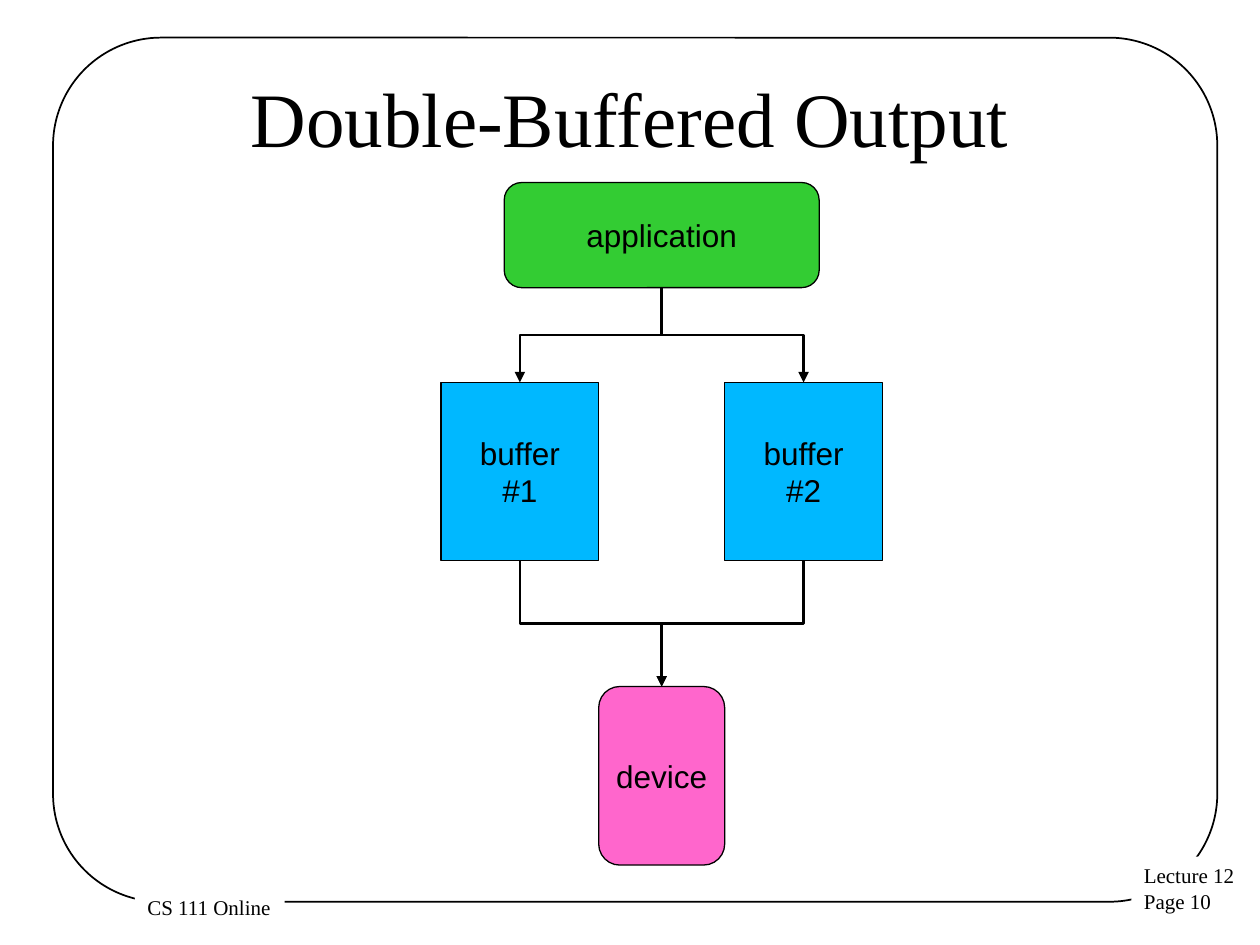
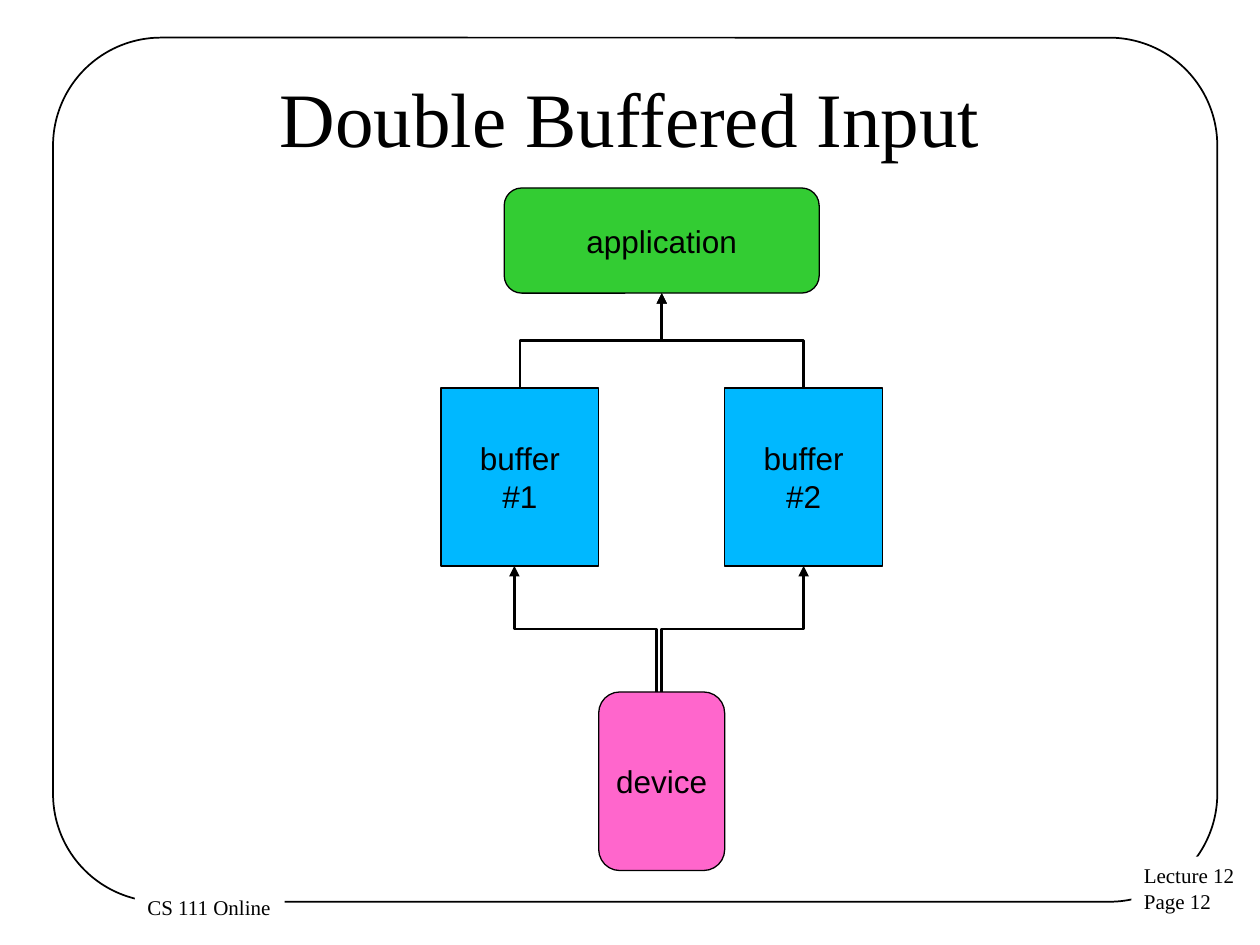
from dataclasses import dataclass

from pptx import Presentation, util as u
from pptx.dml import color
from pptx.enum import shapes, text
from pptx.oxml import ns
from lxml import etree

# Shared style
BLACK, WHITE = "000000", "FFFFFF"
GREEN, BLUE, PINK = "33CC33", "00B8FF", "FF66CC"
SERIF, SANS = "Times New Roman", "Arial"
RECT = shapes.MSO_SHAPE.RECTANGLE
ROUNDED = shapes.MSO_SHAPE.ROUNDED_RECTANGLE
CENTER, LEFT = text.PP_ALIGN.CENTER, text.PP_ALIGN.LEFT
MIDDLE, TOP = text.MSO_ANCHOR.MIDDLE, text.MSO_ANCHOR.TOP

# Diagram layout in centimetres
AXIS = 13.34
BUFFER_OFFSET = 2.86
UPPER_GAP, LOWER_GAP = 1.91, 2.54


@dataclass
class Box:
    left: float
    top: float
    width: float
    height: float
    fill: str | None = None
    line: float | None = None
    corner: float | None = None

    @property
    def center(self) -> float:
        return self.left + self.width / 2

    @property
    def bottom(self) -> float:
        return self.top + self.height


@dataclass
class BufferSlide:
    title: str
    page: int
    top: float
    upward: bool
    left_shift: float = 0


FRAME = Box(1.07, 0.76, 23.47, 17.42, line=1, corner=0.125)
PAGE = Box(22.81, 17.27, 2.36, 1.3, fill=WHITE)
COURSE = Box(2.72, 17.91, 3.02, 0.76, fill=WHITE)
TITLE = Box(1.27, 0.76, 22.86, 3.18)

SLIDES = [
    BufferSlide("Double-Buffered Output", 10, top=3.68, upward=False),
    BufferSlide("Double Buffered Input", 12, top=3.79, upward=True, left_shift=-0.11),
]


def rgb(value: str) -> color.RGBColor:
    return color.RGBColor.from_string(value)


def write(frame, words: str, *, size: float, font: str, align=CENTER, anchor=MIDDLE, wrap=False) -> None:
    """Fill a text frame, one paragraph per line of words."""
    frame.text = words
    frame.word_wrap = wrap
    frame.vertical_anchor = anchor
    for paragraph in frame.paragraphs:
        paragraph.alignment = align
        paragraph.font.size = u.Pt(size)
        paragraph.font.name = font
        paragraph.font.color.rgb = rgb(BLACK)


def draw_box(slide, box: Box, words: str = "", **style) -> None:
    kind = ROUNDED if box.corner else RECT
    shape = slide.shapes.add_shape(kind, *map(u.Cm, (box.left, box.top, box.width, box.height)))
    shape.shadow.inherit = False
    if box.corner:
        shape.adjustments[0] = box.corner
    if box.fill:
        shape.fill.solid()
        shape.fill.fore_color.rgb = rgb(box.fill)
    else:
        shape.fill.background()
    if box.line:
        shape.line.color.rgb = rgb(BLACK)
        shape.line.width = u.Pt(box.line)
    else:
        shape.line.fill.background()
    if words:
        write(shape.text_frame, words, **style)


def draw_elbow(slide, x1: float, y1: float, x2: float, y2: float, upward: bool) -> None:
    """Draw a down-across-down elbow; its arrowhead is at the top if upward."""
    # An elbow leaves sideways, so lay it on its side and turn it upright
    side = 1 if x2 < x1 else -1
    mid_x, mid_y = (x1 + x2) / 2, (y1 + y2) / 2
    half_run, half_rise = side * (y2 - y1) / 2, abs(x2 - x1) / 2
    elbow = slide.shapes.add_connector(
        shapes.MSO_CONNECTOR.ELBOW,
        u.Cm(mid_x - half_run), u.Cm(mid_y - half_rise),
        u.Cm(mid_x + half_run), u.Cm(mid_y + half_rise),
    )
    elbow.line.color.rgb = rgb(BLACK)
    elbow.line.width = u.Pt(1.5)
    properties = elbow._element.spPr
    quarter_turn = 90 if side == 1 else 270
    properties.find(ns.qn("a:xfrm")).set("rot", str(quarter_turn * 60000))
    end = "a:headEnd" if upward else "a:tailEnd"
    etree.SubElement(properties.find(ns.qn("a:ln")), ns.qn(end), type="triangle")
    etree.SubElement(properties, ns.qn("a:effectLst"))


def draw_master(slide, title: str, page: int) -> None:
    """Draw the frame, footers and title that every slide shares."""
    footer = dict(size=12, font=SERIF, align=LEFT, anchor=TOP)
    draw_box(slide, FRAME)
    draw_box(slide, PAGE, f"Lecture 12\nPage {page}", **footer)
    draw_box(slide, COURSE, "CS 111 Online", **footer)
    draw_box(slide, TITLE, title, size=44, font=SERIF, wrap=True)


def draw_diagram(slide, content: BufferSlide) -> None:
    def node(center: float, top: float, width: float, height: float, fill: str, corner=None) -> Box:
        return Box(center - width / 2, top, width, height, fill, 0.75, corner)

    label = dict(size=18, font=SANS)
    application = node(AXIS, content.top, 6.35, 2.12, GREEN, 0.167)
    buffers = [
        node(AXIS + side * BUFFER_OFFSET, application.bottom + UPPER_GAP, 3.18, 3.59, BLUE)
        for side in (-1, 1)
    ]
    device = node(AXIS, buffers[0].bottom + LOWER_GAP, 2.54, 3.6, PINK, 0.167)

    for number, buffer in enumerate(buffers, 1):
        draw_box(slide, buffer, f"buffer\n#{number}", **label)
    draw_box(slide, application, "application", **label)
    draw_box(slide, device, "device", **label)

    # Flow between application, buffers and device
    for buffer, shift in zip(buffers, (content.left_shift, 0)):
        draw_elbow(slide, AXIS, application.bottom, buffer.center, buffer.top, content.upward)
        draw_elbow(slide, buffer.center + shift, buffer.bottom, AXIS + shift, device.top, content.upward)


def main() -> None:
    deck = Presentation()
    deck.slide_width, deck.slide_height = u.Cm(25.4), u.Cm(19.05)
    for content in SLIDES:
        slide = deck.slides.add_slide(deck.slide_layouts[6])
        draw_master(slide, content.title, content.page)
        draw_diagram(slide, content)
    deck.save("out.pptx")


if __name__ == "__main__":
    main()
